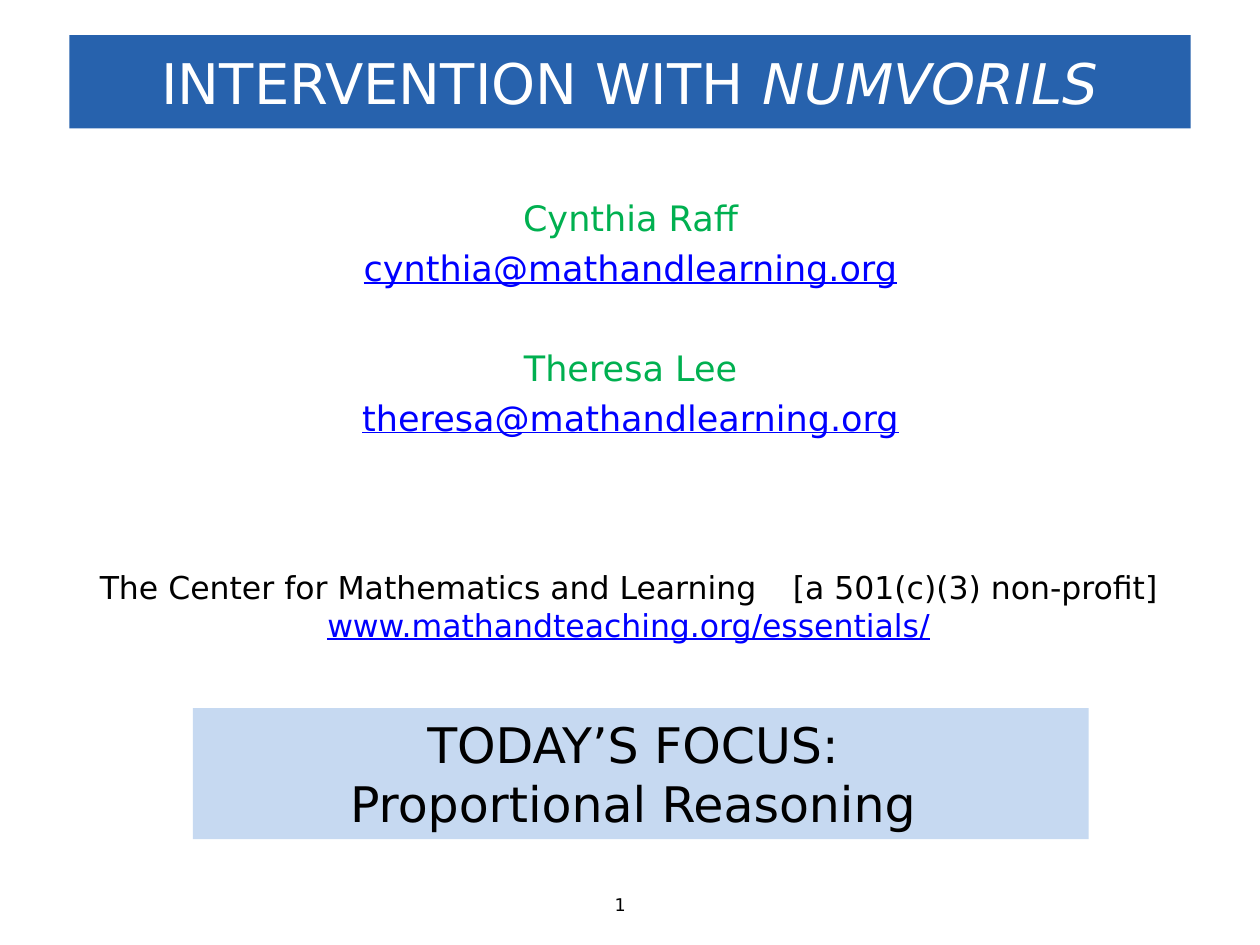
from pptx import Presentation
from pptx.dml.color import RGBColor as RGB
from pptx.enum.shapes import MSO_SHAPE as SHAPE
from pptx.enum.text import MSO_ANCHOR as ANCHOR, PP_ALIGN as ALIGN
from pptx.util import Inches, Pt

FONT = "DejaVu Sans"
COLORS = {"banner": "2762AD", "panel": "C6D9F1", "white": "FFFFFF",
          "text": "000000", "name": "00B050", "link": "0000FF"}
WIDTH, HEIGHT = Inches(10), Inches(7.5)
COLS, ROWS = 100, 75
PRESENTERS = [("Cynthia Raff", "cynthia@mathandlearning.org"),
              ("Theresa Lee", "theresa@mathandlearning.org")]


def place(box):
    """Turn a box in grid columns and rows into slide lengths."""
    x, y, w, h = box
    return (int(WIDTH * x / COLS), int(HEIGHT * y / ROWS),
            int(WIDTH * w / COLS), int(HEIGHT * h / ROWS))


def add_text(slide, box):
    """Add a wrapping text box and return its text frame."""
    tf = slide.shapes.add_textbox(*place(box)).text_frame
    tf.word_wrap = True
    return tf


def add_panel(slide, box, fill):
    """Add a plain filled rectangle and return its text frame."""
    sp = slide.shapes.add_shape(SHAPE.RECTANGLE, *place(box))
    sp.shadow.inherit = False
    sp.fill.solid()
    sp.fill.fore_color.rgb = RGB.from_string(COLORS[fill])
    sp.line.fill.background()
    sp.text_frame.word_wrap = True
    return sp.text_frame


def add_line(tf, runs, size, before=0, align=ALIGN.CENTER):
    """Add a paragraph of (text, color, italic) runs; links are underlined."""
    p = tf.paragraphs[0] if not tf.paragraphs[0].runs else tf.add_paragraph()
    p.alignment = align
    if before:
        p.space_before = Pt(before)
    for text, color, italic in runs:
        r = p.add_run()
        r.text = text
        r.font.name, r.font.size = FONT, Pt(size)
        r.font.italic = italic
        r.font.underline = color == "link"
        r.font.color.rgb = RGB.from_string(COLORS[color])


def title_banner(slide, box):
    """Draw the title on its dark banner."""
    tf = add_panel(slide, box, "banner")
    tf.vertical_anchor = ANCHOR.MIDDLE
    add_line(tf, [("INTERVENTION WITH ", "white", False),
                  ("NUMVORILS", "white", True)], 32)


def presenters(slide, box):
    """List each presenter's name above the e-mail address."""
    tf = add_text(slide, box)
    tf.margin_top = int(HEIGHT * 0.06)
    for i, (name, email) in enumerate(PRESENTERS):
        add_line(tf, [(name, "name", False)], 20, 32.7 * i)
        add_line(tf, [(email, "link", False)], 20, 4.7)


def organization(slide, box):
    """Name the host organization and its web address."""
    tf = add_text(slide, box)
    add_line(tf, [("The Center for Mathematics and Learning \t"
                   "[a 501(c)(3) non-profit]", "text", False)], 18)
    add_line(tf, [("www.mathandteaching.org/essentials/", "link", False)], 18)


def focus_panel(slide, box):
    """Show the focus of the day on a pale panel."""
    tf = add_panel(slide, box, "panel")
    tf.vertical_anchor = ANCHOR.TOP
    for text in ("TODAY’S FOCUS: ", "Proportional Reasoning "):
        add_line(tf, [(text, "text", False)], 28)


def page_number(slide, box):
    """Put the page number at the foot of the slide."""
    tf = add_text(slide, box)
    tf.word_wrap = False
    add_line(tf, [("1", "text", False)], 10, align=ALIGN.LEFT)


def main():
    """Build and save the title slide."""
    prs = Presentation()
    prs.slide_width, prs.slide_height = WIDTH, HEIGHT
    slide = prs.slides.add_slide(prs.slide_layouts[6])
    page_number(slide, (47.8, 70.5, 4.4, 2.7))
    title_banner(slide, (5.5, 2.8, 89, 7.4))
    presenters(slide, (25.9, 11.1, 48.3, 29.7))
    organization(slide, (5.5, 44.6, 88.8, 7.1))
    focus_panel(slide, (15.3, 56.2, 71.1, 10.4))
    prs.save("out.pptx")


if __name__ == "__main__":
    main()
